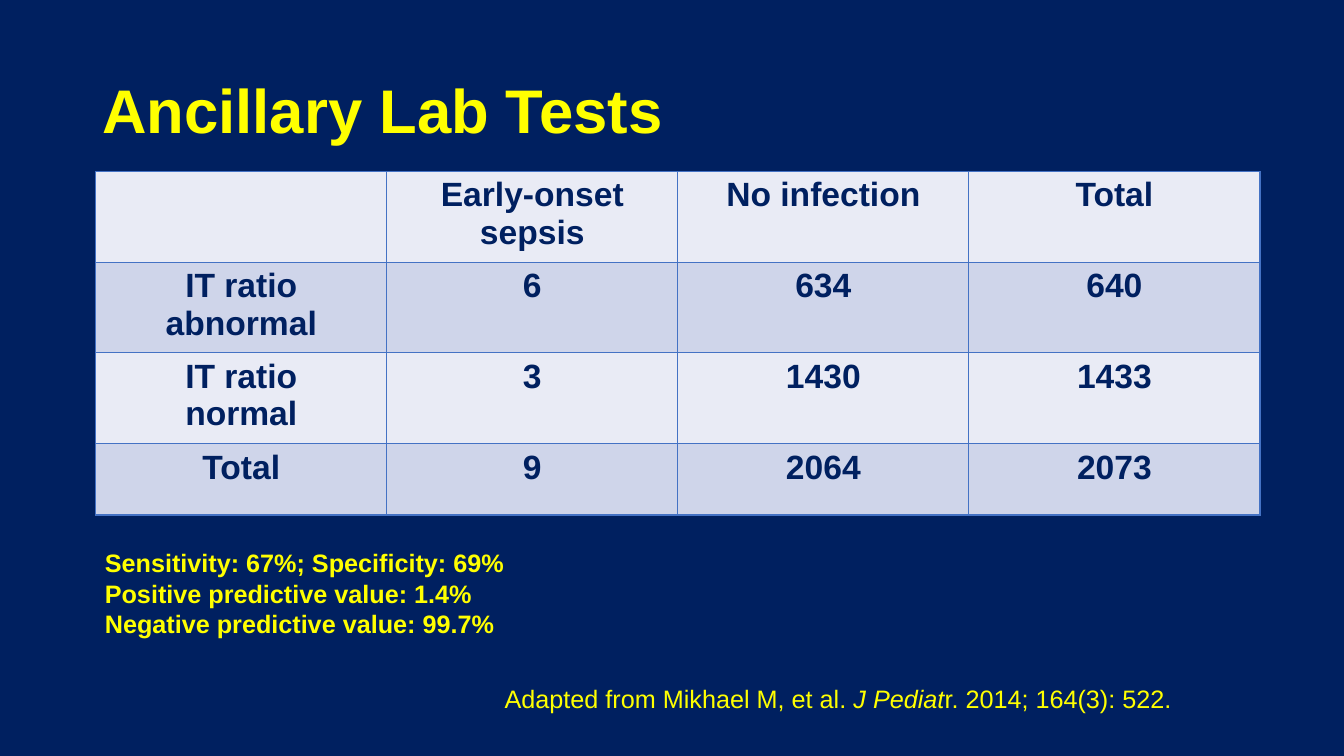
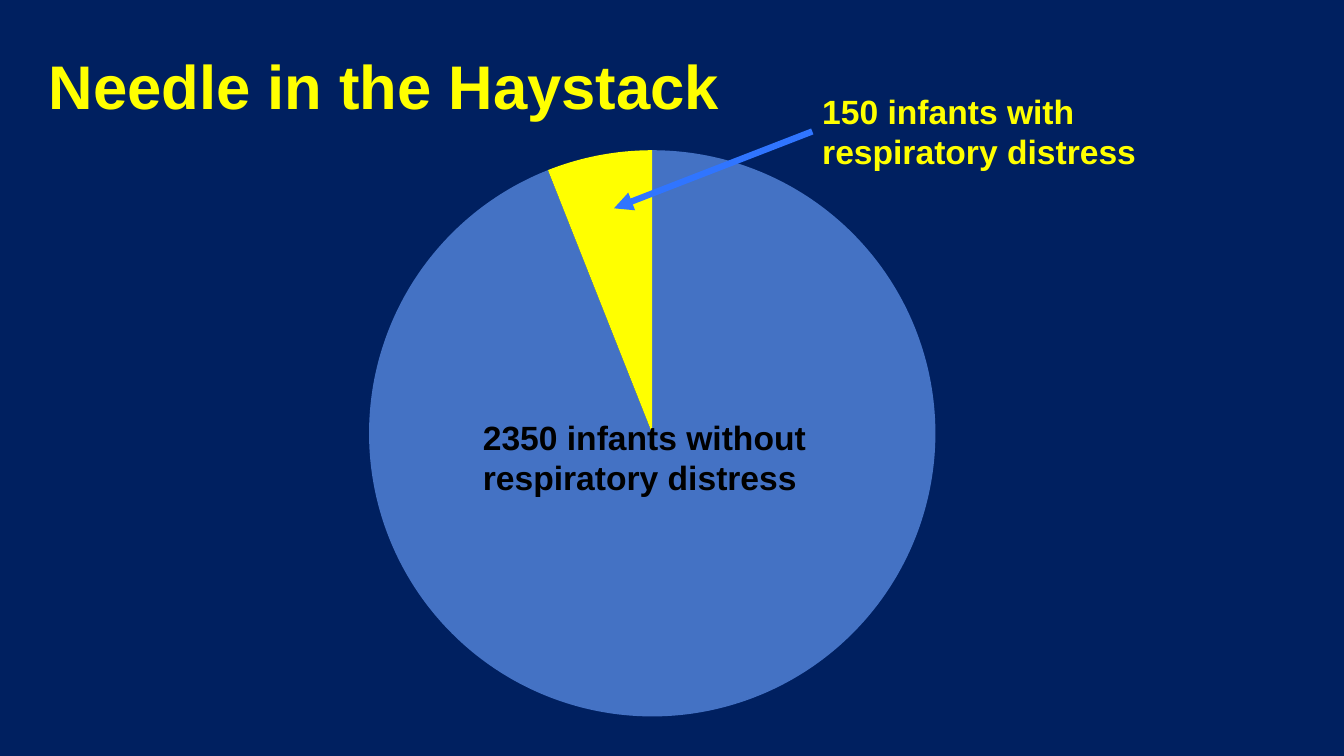
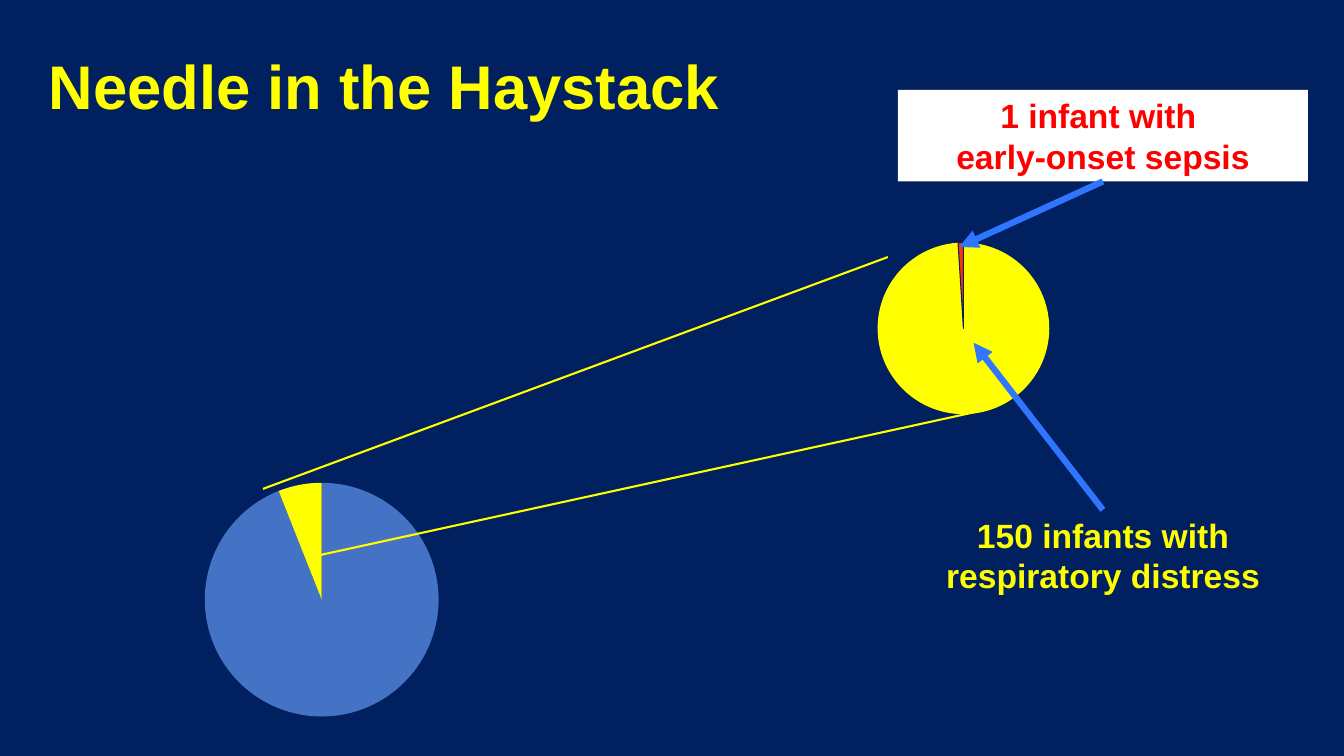
from dataclasses import dataclass
from typing import NamedTuple, Optional

from lxml.etree import SubElement
from pptx import Presentation
from pptx.chart.data import CategoryChartData
from pptx.dml.color import RGBColor
from pptx.enum.chart import XL_CHART_TYPE
from pptx.enum.shapes import MSO_CONNECTOR, MSO_SHAPE
from pptx.enum.text import MSO_ANCHOR, PP_ALIGN
from pptx.oxml import parse_xml
from pptx.oxml.ns import nsdecls, qn
from pptx.util import Inches, Pt

COLUMNS, ROWS = 160, 90
SLIDE_WIDTH, SLIDE_HEIGHT = Inches(13.33), Inches(7.5)

NAVY = RGBColor(0x00, 0x20, 0x60)
YELLOW = RGBColor(0xFF, 0xFF, 0x00)
BLUE = RGBColor(0x44, 0x72, 0xC4)
ARROW_BLUE = RGBColor(0x30, 0x75, 0xFF)
GRAY = RGBColor(0xA5, 0xA5, 0xA5)
ORANGE_RED = RGBColor(0xFF, 0x33, 0x00)
RED = RGBColor(0xFF, 0x00, 0x00)
BLACK = RGBColor(0x00, 0x00, 0x00)
WHITE = RGBColor(0xFF, 0xFF, 0xFF)
BANDS = (RGBColor(0xE9, 0xEB, 0xF5), RGBColor(0xCF, 0xD5, 0xEA))

FONT = "Arial"
PIE_MARGIN = 3.36
BOTTOM, LEFT, TOP = 2, 1, 0


class Point(NamedTuple):
    column: float
    row: float


class Area(NamedTuple):
    column: float
    row: float
    columns: float
    rows: float


class Span(NamedTuple):
    text: str
    italic: bool = False


@dataclass(frozen=True)
class Style:
    size: int
    color: RGBColor
    bold: bool = True
    align: PP_ALIGN = PP_ALIGN.LEFT
    spacing: Optional[float] = None


@dataclass(frozen=True)
class Pie:
    area: Area
    values: tuple
    colors: tuple
    outlined: Optional[int] = None


TITLE = Style(44, YELLOW, spacing=0.9)
CELL = Style(24, NAVY, align=PP_ALIGN.CENTER)
NOTE = Style(18, YELLOW)
CITATION = Style(18, YELLOW, bold=False)
LABEL = Style(24, YELLOW)
CENTERED_LABEL = Style(24, YELLOW, align=PP_ALIGN.CENTER)
DARK_LABEL = Style(24, BLACK)
ALERT = Style(24, RED, align=PP_ALIGN.CENTER)

HAYSTACK_TITLE = Area(4.6, 2, 138, 17.4)
HAYSTACK_VALUES = (94, 6, 0)
HAYSTACK_COLORS = (BLUE, YELLOW, GRAY)
DISTRESS_TEXT = "150 infants with respiratory distress"

LAB_RESULTS = (
    ("", "Early-onset sepsis", "No infection", "Total"),
    ("IT ratio abnormal", "6", "634", "640"),
    ("IT ratio\nnormal", "3", "1430", "1433"),
    ("Total", "9", "2064", "2073"),
)


def across(columns: float) -> int:
    return round(SLIDE_WIDTH * columns / COLUMNS)


def down(rows: float) -> int:
    return round(SLIDE_HEIGHT * rows / ROWS)


def place(area: Area) -> tuple:
    return across(area.column), down(area.row), across(area.columns), down(area.rows)


def write(frame, paragraphs, style: Style) -> None:
    frame.word_wrap = True
    for index, spans in enumerate(paragraphs):
        para = frame.paragraphs[0] if index == 0 else frame.add_paragraph()
        para.alignment = style.align
        if style.spacing:
            para.line_spacing = style.spacing
        for span in spans:
            run = para.add_run()
            run.text = span.text
            run.font.name = FONT
            run.font.size = Pt(style.size)
            run.font.bold = style.bold
            run.font.italic = span.italic
            run.font.color.rgb = style.color


def lines(*texts: str) -> list:
    return [[Span(text)] for text in texts]


def add_text(page, area: Area, paragraphs, style: Style):
    box = page.shapes.add_textbox(*place(area))
    write(box.text_frame, paragraphs, style)
    return box


def add_title(page, area: Area, text: str) -> None:
    box = add_text(page, area, lines(text), TITLE)
    box.text_frame.vertical_anchor = MSO_ANCHOR.MIDDLE


def add_panel(page, area: Area, paragraphs, style: Style):
    panel = page.shapes.add_shape(MSO_SHAPE.RECTANGLE, *place(area))
    panel.shadow.inherit = False
    panel.fill.solid()
    panel.fill.fore_color.rgb = WHITE
    panel.line.fill.background()
    write(panel.text_frame, paragraphs, style)
    return panel


def add_line(page, start: Point, end: Point, color: RGBColor, weight: float):
    line = page.shapes.add_connector(
        MSO_CONNECTOR.STRAIGHT,
        across(start.column), down(start.row), across(end.column), down(end.row),
    )
    line.line.color.rgb = color
    line.line.width = Pt(weight)
    SubElement(line.element.spPr, qn("a:effectLst"))
    return line


def add_arrow(page, box, side: int, end: Point) -> None:
    arrow = add_line(page, Point(0, 0), end, ARROW_BLUE, 4.5)
    arrow.begin_connect(box, side)
    SubElement(arrow.line._get_or_add_ln(), qn("a:tailEnd"), type="triangle")


def add_pie(page, pie: Pie) -> None:
    data = CategoryChartData()
    data.categories = [str(index + 1) for index in range(len(pie.values))]
    data.add_series("Series 1", pie.values)
    chart = page.shapes.add_chart(XL_CHART_TYPE.PIE, *place(pie.area), data).chart
    chart.has_title = False
    chart.has_legend = False
    chart.font.name = FONT
    chart.font.size = Pt(10)
    chart.font.color.rgb = YELLOW
    plot = chart.plots[0]
    plot.vary_by_categories = False
    for index, color in enumerate(pie.colors):
        slice_format = plot.series[0].points[index].format
        slice_format.fill.solid()
        slice_format.fill.fore_color.rgb = color
        if index == pie.outlined:
            slice_format.line.color.rgb = NAVY
            slice_format.line.width = Pt(0.75)
        else:
            slice_format.line.fill.background()
    fit_circle(chart, pie.area)


def fit_circle(chart, area: Area) -> None:
    diameter = area.rows - PIE_MARGIN
    width, height = diameter / area.columns, diameter / area.rows
    shares = {"x": (1 - width) / 2, "y": (1 - height) / 2, "w": width, "h": height}
    modes = "".join(f'<c:{key}Mode val="edge"/>' for key in "xy")
    sizes = "".join(f'<c:{key} val="{share:.4f}"/>' for key, share in shares.items())
    layout = parse_xml(
        f'<c:layout {nsdecls("c")}><c:manualLayout><c:layoutTarget val="inner"/>'
        f"{modes}{sizes}</c:manualLayout></c:layout>"
    )
    plot_area = chart.element.find(f'{qn("c:chart")}/{qn("c:plotArea")}')
    for old in plot_area.findall(qn("c:layout")):
        plot_area.remove(old)
    plot_area.insert(0, layout)


def add_borders(cell, color: RGBColor) -> None:
    properties = cell._tc.get_or_add_tcPr()
    for side in ("lnL", "lnR", "lnT", "lnB"):
        border = SubElement(properties, qn(f"a:{side}"), w=str(Pt(1)))
        fill = SubElement(border, qn("a:solidFill"))
        SubElement(fill, qn("a:srgbClr"), val=str(color))


def add_results(page, area: Area, heights: tuple) -> None:
    table = page.shapes.add_table(
        len(LAB_RESULTS), len(LAB_RESULTS[0]), *place(area)
    ).table
    table.first_row = False
    table.horz_banding = False
    for column in table.columns:
        column.width = across(area.columns / len(LAB_RESULTS[0]))
    for row_index, texts in enumerate(LAB_RESULTS):
        table.rows[row_index].height = down(heights[row_index])
        for column_index, text in enumerate(texts):
            cell = table.cell(row_index, column_index)
            add_borders(cell, BLUE)
            cell.fill.solid()
            cell.fill.fore_color.rgb = BANDS[row_index % 2]
            if text:
                write(cell.text_frame, lines(*text.split("\n")), CELL)


def add_page(deck):
    page = deck.slides.add_slide(deck.slide_layouts[6])
    page.background.fill.solid()
    page.background.fill.fore_color.rgb = NAVY
    return page


def build_lab_tests(deck) -> None:
    page = add_page(deck)
    add_title(page, Area(11, 4.8, 138, 17.4), "Ancillary Lab Tests")
    add_results(page, Area(11.4, 20.4, 138.6, 38.8), (10.1, 10.1, 10.1, 8.5))
    citation = [
        Span("Adapted from Mikhael M, et al. "),
        Span("J Pediat", italic=True),
        Span("r. 2014; 164(3): 522."),
    ]
    add_text(page, Area(58.9, 80.8, 98.2, 4.8), [citation], CITATION)
    statistics = lines(
        "Sensitivity: 67%; Specificity: 69%",
        "Positive predictive value: 1.4%",
        "Negative predictive value: 99.7%",
    )
    add_text(page, Area(11.3, 64.6, 138.4, 12.1), statistics, NOTE)


def build_haystack(deck) -> None:
    page = add_page(deck)
    add_title(page, HAYSTACK_TITLE, "Needle in the Haystack")
    add_pie(page, Pie(Area(7.2, 16.2, 140.9, 70.8), HAYSTACK_VALUES, HAYSTACK_COLORS))
    add_text(
        page, Area(56.3, 49, 48.8, 10.9),
        lines("2350 infants without respiratory distress"), DARK_LABEL,
    )
    callout = add_text(page, Area(96.7, 10.2, 48.8, 10.9), lines(DISTRESS_TEXT), LABEL)
    add_arrow(page, callout, LEFT, Point(73.1, 24.8))


def build_needle(deck) -> None:
    page = add_page(deck)
    add_pie(page, Pie(Area(7.2, 55.8, 62.2, 31.2), HAYSTACK_VALUES, HAYSTACK_COLORS))
    add_title(page, HAYSTACK_TITLE, "Needle in the Haystack")
    add_pie(
        page, Pie(Area(94.9, 27.2, 39.6, 23.8), (99, 1), (YELLOW, ORANGE_RED), outlined=1)
    )
    add_line(page, Point(31.3, 58.2), Point(105.7, 30.6), YELLOW, 1.5)
    add_line(page, Point(38, 66.1), Point(115.9, 49.1), YELLOW, 1.5)
    distress = add_text(
        page, Area(106.9, 60.7, 48.8, 10.9), lines(DISTRESS_TEXT), CENTERED_LABEL
    )
    sepsis = add_panel(
        page, Area(106.9, 10.7, 48.8, 10.9),
        lines("1 infant with ", "early-onset sepsis"), ALERT,
    )
    add_arrow(page, sepsis, BOTTOM, Point(114.2, 29.4))
    add_arrow(page, distress, TOP, Point(115.9, 40.8))


def main() -> None:
    deck = Presentation()
    deck.slide_width, deck.slide_height = SLIDE_WIDTH, SLIDE_HEIGHT
    build_lab_tests(deck)
    build_haystack(deck)
    build_needle(deck)
    deck.save("out.pptx")


if __name__ == "__main__":
    main()
